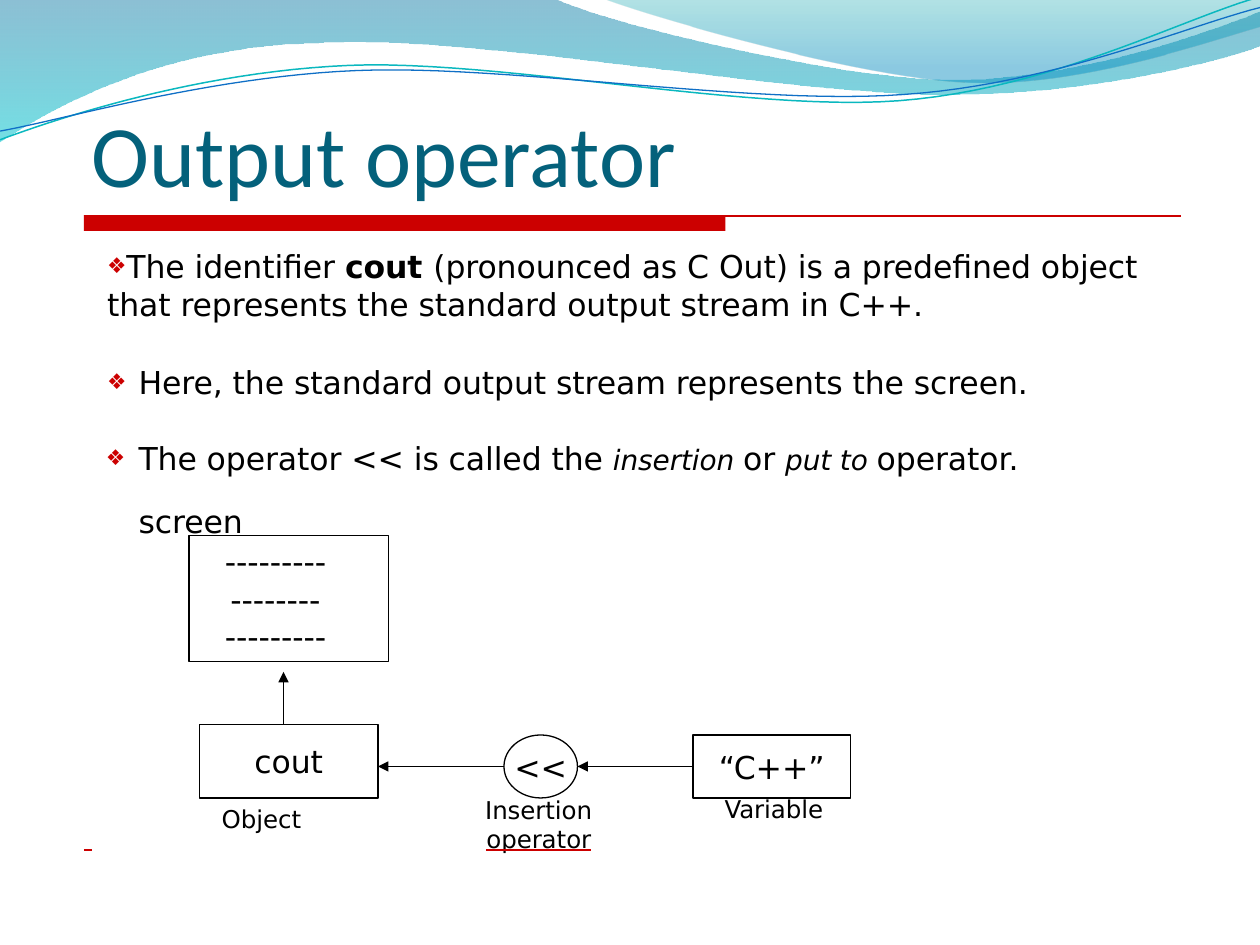
from dataclasses import dataclass

from lxml.etree import SubElement
from pptx import Presentation
from pptx.dml.color import RGBColor as RGB
from pptx.enum.shapes import MSO_CONNECTOR as Link, MSO_SHAPE as Preset
from pptx.enum.text import MSO_ANCHOR as Anchor, PP_ALIGN as Align
from pptx.oxml.ns import qn
from pptx.util import Pt


@dataclass(frozen=True)
class Theme:
    title: str = "04617B"
    accent: str = "CC0000"
    ink: str = "000000"
    title_font: str = "Calibri"
    body_font: str = "DejaVu Sans"
    title_size: int = 50
    body_size: int = 18
    term_size: int = 16
    label_size: int = 14
    hairline: float = 0.75


theme = Theme()


def write(frame, text, size=theme.body_size, font=theme.body_font, color=theme.ink,
          align=Align.LEFT, before=1, spacing=None, margin=0.7, indent=0,
          bullet=None, underline=None, tracking=-0.05):
    """Add a paragraph; text is a string or a list of (string, style) pairs."""
    unused = len(frame.paragraphs) == 1 and not frame.paragraphs[0].runs
    para = frame.paragraphs[0] if unused else frame.add_paragraph()
    para.alignment, para.space_before = align, Pt(before)
    if spacing:
        para.line_spacing = spacing
    props = para._p.get_or_add_pPr()
    props.set("marL", str(Pt(margin)))
    props.set("indent", str(Pt(indent)))
    if bullet:
        SubElement(SubElement(props, qn("a:buClr")), qn("a:srgbClr"), val=theme.accent)
        SubElement(props, qn("a:buSzPct"), val="69000")
        SubElement(props, qn("a:buFont"), typeface=font)
        SubElement(props, qn("a:buChar"), char=bullet)
    for words, style in [(text, "")] if isinstance(text, str) else text:
        if style == "break":
            para.add_line_break()
        run = para.add_run()
        run.text = words
        run.font.name = font
        run.font.size = Pt(theme.term_size if style == "term" else size)
        run.font.bold, run.font.italic = style == "bold", style == "term"
        run.font.color.rgb = RGB.from_string(color)
        run_props = run._r.get_or_add_rPr()
        run_props.set("spc", str(round(tracking * 100)))
        if underline:
            run.font.underline = True
            line_fill = SubElement(run_props, qn("a:uFill"))
            SubElement(SubElement(line_fill, qn("a:solidFill")), qn("a:srgbClr"), val=underline)
            run_props.find(qn("a:solidFill")).addnext(line_fill)


def flatten(start, segments, steps=24):
    """Turn lines (x, y) and cubic curves (three x, y pairs) into points."""
    points = [start]
    for segment in segments:
        if len(segment) == 2:
            points.append(segment)
            continue
        x0, y0 = points[-1]
        x1, y1, x2, y2, x3, y3 = segment
        for step in range(1, steps + 1):
            t = step / steps
            a, b, c, d = (1 - t) ** 3, 3 * t * (1 - t) ** 2, 3 * t * t * (1 - t), t ** 3
            points.append((a * x0 + b * x1 + c * x2 + d * x3,
                           a * y0 + b * y1 + c * y2 + d * y3))
    return [(Pt(x), Pt(y)) for x, y in points]


deck = Presentation()
deck.slide_width, deck.slide_height = Pt(720), Pt(540)
slide = deck.slides.add_slide(deck.slide_layouts[6])
shapes = slide.shapes

# Waves at the top: start, segments, gradient stops (position, color, alpha) or line
waves = [
    ((0, 0), [(317, -0.7), (342.7, 12.2, 478, 45.4, 545.8, 45.4),
              (614.2, 45.4, 689.8, 18.7, 720, 6.5), (720.7, 25.9),
              (707.8, 31.7, 626.4, 54.7, 537.1, 54), (447.8, 54, 275, 20.2, 185, 24.5),
              (92.9, 25.9, 33.1, 59.8, -0.7, 81.4)],
     [(0, "0074A1", 45), (1, "00C6CF", 55)], None),
    ((345, -0.7), [(366.5, 8, 491, 44.6, 553.7, 46.8),
                   (616.3, 49.7, 691.9, 23, 720, 15.1), (720, 0)],
     [(0, "00A1A9", 30), (0.8, "008BBF", 45)], None),
    ((0, 79.9), [(34.6, 67, 113.8, 41, 199.4, 37.4), (284.4, 33.8, 427, 64.1, 513.4, 57.6),
                 (599.8, 51.1, 675.4, 10.8, 718.6, -1.4)], None, ("0AB8BF", 0.85)),
    ((0, 74.9), [(33.8, 69.1, 118.1, 43.9, 203.8, 40.3), (290.2, 36.7, 429.8, 60.5, 516.2, 54),
                 (601.9, 48.2, 677.5, 15.1, 720, 4.3)], None, ("0F6FC6", 0.75)),
]
for start, segments, stops, stroke in waves:
    first, *rest = flatten(start, segments)
    outline = shapes.build_freeform(*first, scale=1.0)
    outline.add_line_segments(rest, close=bool(stops))
    wave = outline.convert_to_shape()
    wave.shadow.inherit = False
    if stops:
        wave.line.fill.background()
        wave.fill.gradient()
        wave.fill.gradient_angle = 270
        for stop, (position, color, _) in zip(wave.fill.gradient_stops, stops):
            stop.position, stop.color.rgb = position, RGB.from_string(color)
        for tint, (_, _, alpha) in zip(wave._element.iter(qn("a:srgbClr")), stops):
            SubElement(tint, qn("a:alpha"), val=str(alpha * 1000))
    else:
        wave.fill.background()
        wave.line.color.rgb, wave.line.width = RGB.from_string(stroke[0]), Pt(stroke[1])

# Title bar, and the outlined parts of the diagram
parts = {}
for part, preset, left, top, width, height in [
    ("bar", Preset.RECTANGLE, 48, 123, 366.5, 9),
    ("screen", Preset.RECTANGLE, 108, 306, 114, 72),
    ("cout", Preset.RECTANGLE, 114, 414, 102, 42),
    ("variable", Preset.RECTANGLE, 396, 420, 90, 36),
    ("operator", Preset.OVAL, 288, 420, 42, 36),
]:
    shape = parts[part] = shapes.add_shape(preset, Pt(left), Pt(top), Pt(width), Pt(height))
    shape.shadow.inherit = False
    if part == "bar":
        shape.fill.solid()
        shape.fill.fore_color.rgb = RGB.from_string(theme.accent)
        shape.line.fill.background()
        continue
    shape.fill.background()
    shape.line.color.rgb, shape.line.width = RGB.from_string(theme.ink), Pt(theme.hairline)
    frame = shape.text_frame
    frame.margin_left = frame.margin_top = frame.margin_bottom = 0
    frame.margin_right = Pt(15 if part == "screen" else 0)
    frame.vertical_anchor = Anchor.MIDDLE
    frame.word_wrap = part != "operator"

for part, words in [("screen", "---------"), ("screen", "--------"), ("screen", "---------"),
                    ("cout", "cout"), ("variable", "“C++”"), ("operator", "<<")]:
    write(parts[part].text_frame, words, align=Align.CENTER, margin=0, before=0)

# Rule beside the title bar, short mark at the foot, then the arrows of the data flow
for x1, y1, x2, y2, color, weight, source in [
    (48, 123.3, 674.8, 123.3, theme.accent, 1, None),
    (48, 485.8, 52.5, 485.8, theme.accent, theme.hairline, None),
    (162, 414, 162, 384, theme.ink, 1, None),
    (396, 438, 330, 438, theme.ink, 1, "variable"),
    (288, 438, 216, 438, theme.ink, 1, None),
]:
    link = shapes.add_connector(Link.STRAIGHT, Pt(x1), Pt(y1), Pt(x2), Pt(y2))
    link.line.color.rgb = RGB.from_string(color)
    link.line.width = Pt(weight)
    if source:
        link.begin_connect(parts[source], 1)
    if color == theme.ink:
        SubElement(link.line._get_or_add_ln(), qn("a:tailEnd"), type="triangle", w="med", len="med")
    SubElement(link._element.spPr, qn("a:effectLst"))

# Text boxes: place, then paragraphs with their format
item = dict(bullet="❖")
label = dict(size=theme.label_size)
for left, top, width, height, paragraphs in [
    (51.5, 56, 381, 62, [("Output operator", dict(
        size=theme.title_size, font=theme.title_font, color=theme.title, tracking=0))]),
    (60.5, 140.4, 605.5, 174, [
        ([("The identifier ", ""), ("cout ", "bold"),
          ("(pronounced as C Out) is a predefined object that represents "
           "the standard output stream in C++.", "")], item),
        ("Here, the standard output stream represents the screen.",
         dict(item, before=23, margin=18.7, indent=-18)),
        ([("The operator << is called the ", ""), ("insertion ", "term"), ("or ", ""),
          ("put to ", "term"), ("operator.", ""), ("screen", "break")],
         dict(item, before=7.2, spacing=1.67, margin=18.7, indent=-18.7)),
    ]),
    (276.5, 453.6, 65.5, 18.7, [("Insertion", label)]),
    (277.2, 470.2, 65.5, 18.7, [("operator", dict(label, underline=theme.accent))]),
    (126, 458.6, 50, 18.7, [("Object", label)]),
    (413.3, 452.9, 62, 18.7, [("Variable", label)]),
]:
    frame = shapes.add_textbox(Pt(left), Pt(top), Pt(width), Pt(height)).text_frame
    frame.word_wrap = True
    frame.margin_left = frame.margin_right = frame.margin_bottom = 0
    frame.margin_top = Pt(0.9)
    for words, style in paragraphs:
        write(frame, words, **style)

deck.save("out.pptx")
